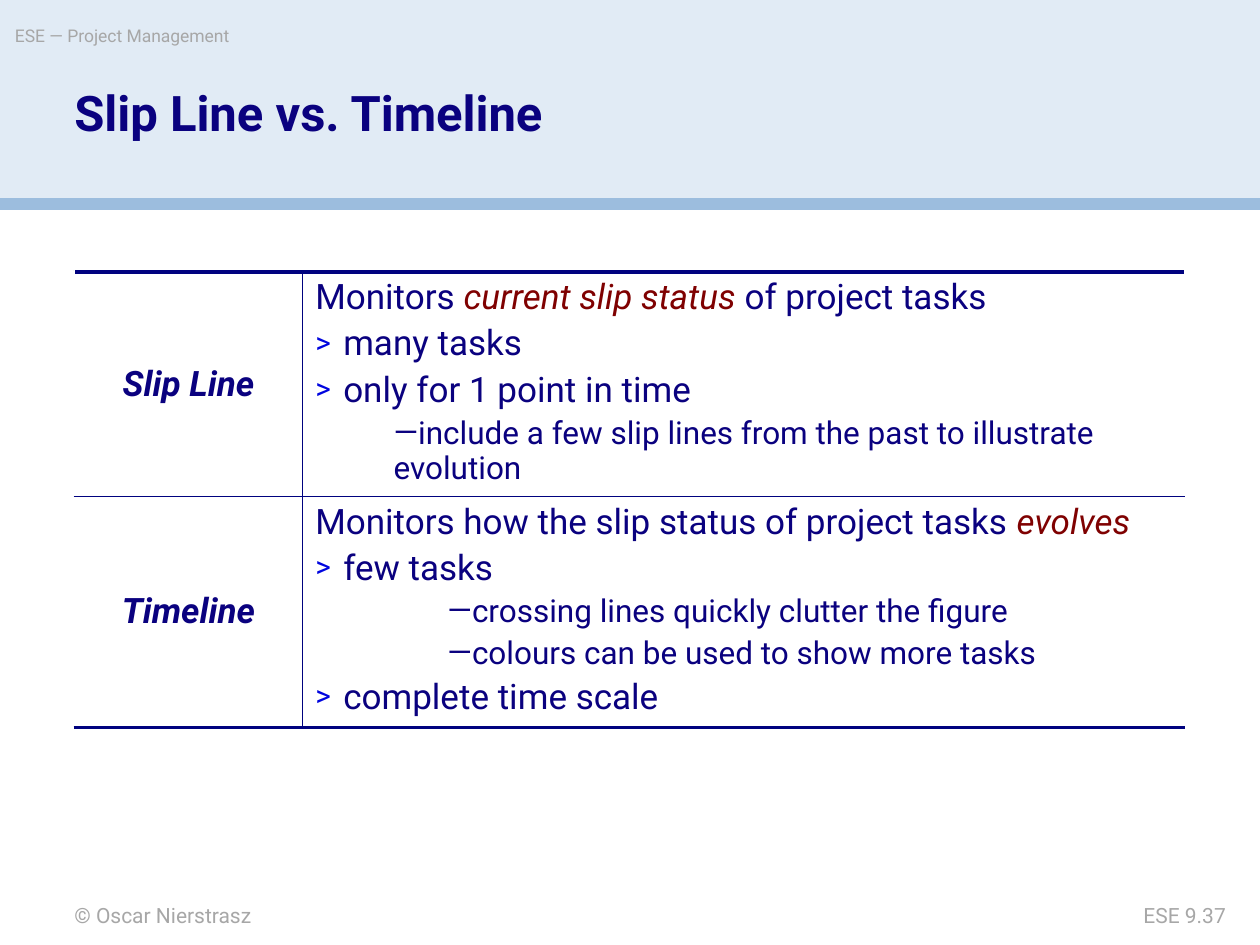
from lxml import etree
from pptx import Presentation
from pptx.dml.color import RGBColor
from pptx.enum.shapes import MSO_SHAPE
from pptx.enum.text import MSO_ANCHOR, PP_ALIGN
from pptx.oxml.ns import qn
from pptx.util import Pt

RECT = MSO_SHAPE.RECTANGLE
LEFT, CENTER, RIGHT = PP_ALIGN.LEFT, PP_ALIGN.CENTER, PP_ALIGN.RIGHT
TOP, MIDDLE = MSO_ANCHOR.TOP, MSO_ANCHOR.MIDDLE

COLORS = {
    "band": "E1EBF5",
    "stripe": "9CBDDE",
    "muted": "A7A7A7",
    "ink": "0A017F",
    "accent": "7F0101",
    "bullet": "0005DF",
    "rule": "00027F",
}
THICK, THIN = 2.25, 1

# Paragraph styles: size, left margin, first-line indent, bullet
INTRO = dict(size=20, margin=16, indent=-16)
POINT = dict(INTRO, bullet=">")
DETAIL = dict(size=18, margin=44.75, indent=0, bullet="—", level=1)
DEEP_DETAIL = dict(DETAIL, margin=45, indent=30.5)

COMPARISON = [
    ("Slip Line", [
        (["Monitors ", "*current slip status", " of project tasks"], INTRO),
        (["many tasks"], POINT),
        (["only for 1 point in time"], POINT),
        (["include a few slip lines from the past to illustrate evolution"], DETAIL),
    ]),
    ("Timeline", [
        (["Monitors how the slip status of project tasks ", "*evolves"], INTRO),
        (["few tasks"], POINT),
        (["crossing lines quickly clutter the figure"], DEEP_DETAIL),
        (["colours can be used to show more tasks"], DEEP_DETAIL),
        (["complete time scale"], POINT),
    ]),
]


def color(name):
    return RGBColor.from_string(COLORS[name])


def add_child(parent, tag, **attributes):
    child = etree.SubElement(parent, qn(tag))
    for key, value in attributes.items():
        child.set(key, str(value))
    return child


def add_text(paragraph, text, font="Roboto", size=20, ink="ink", bold=False, italic=False):
    run = paragraph.add_run()
    run.text = text
    run.font.name = font
    run.font.size = Pt(size)
    run.font.bold = bold
    run.font.italic = italic
    run.font.color.rgb = color(ink)


def space_and_bullet(paragraph, margin=0, indent=0, bullet=None, level=0):
    """Set the spacing of table text, with its indents and bullet."""
    paragraph.line_spacing = 0.95
    paragraph.level = level
    props = paragraph._p.get_or_add_pPr()
    props.set("marL", str(Pt(margin)))
    props.set("indent", str(Pt(indent)))
    add_child(add_child(props, "a:spcBef"), "a:spcPct", val=20000)
    if bullet == ">":
        add_child(add_child(props, "a:buClr"), "a:srgbClr", val=COLORS["bullet"])
        add_child(props, "a:buSzPct", val=85000)
    if bullet:
        add_child(props, "a:buFont", typeface="Roboto")
        add_child(props, "a:buChar", char=bullet)
    else:
        add_child(props, "a:buNone")


def set_borders(cell, **widths):
    """Draw the given sides (L, R, T, B, in this order) and clear the fill."""
    props = cell._tc.get_or_add_tcPr()
    for side, width in widths.items():
        line = add_child(props, f"a:ln{side}", w=Pt(width))
        add_child(add_child(line, "a:solidFill"), "a:srgbClr", val=COLORS["rule"])
    cell.fill.background()


class SlideBuilder:
    def __init__(self, slide):
        self.shapes = slide.shapes

    def bar(self, top, height, fill):
        bar = self.shapes.add_shape(RECT, Pt(0), Pt(top), Pt(720), Pt(height))
        bar.shadow.inherit = False
        bar.fill.solid()
        bar.fill.fore_color.rgb = color(fill)
        bar.line.fill.background()

    def label(self, left, top, width, height, text, align=LEFT, spacing=1.0, **style):
        box = self.shapes.add_textbox(Pt(left), Pt(top), Pt(width), Pt(height))
        frame = box.text_frame
        frame.word_wrap = True
        frame.vertical_anchor = TOP
        frame.margin_left = frame.margin_right = Pt(0)
        frame.margin_top = frame.margin_bottom = Pt(0)
        paragraph = frame.paragraphs[0]
        paragraph.alignment = align
        paragraph.line_spacing = spacing
        add_text(paragraph, text, **style)

    def comparison(self, left, top, column_widths, row_heights, rows):
        """Add a table of names and details; "*" marks an emphasised run."""
        table = self.shapes.add_table(
            len(rows), 2, Pt(left), Pt(top),
            Pt(sum(column_widths)), Pt(sum(row_heights))).table
        table.first_row = table.horz_banding = False
        for column, width in zip(table.columns, column_widths):
            column.width = Pt(width)
        for index, (name, details) in enumerate(rows):
            table.rows[index].height = Pt(row_heights[index])
            above = THICK if index == 0 else THIN
            below = THICK if index == len(rows) - 1 else THIN
            name_cell, detail_cell = table.cell(index, 0), table.cell(index, 1)
            set_borders(name_cell, R=THIN, T=above, B=below)
            set_borders(detail_cell, L=THIN, T=above, B=below)
            self.name(name_cell, name)
            self.details(detail_cell, details)

    def name(self, cell, text):
        cell.vertical_anchor = MIDDLE
        paragraph = cell.text_frame.paragraphs[0]
        paragraph.alignment = CENTER
        space_and_bullet(paragraph)
        add_text(paragraph, text, bold=True, italic=True)

    def details(self, cell, details):
        frame = cell.text_frame
        for index, (parts, style) in enumerate(details):
            paragraph = frame.add_paragraph() if index else frame.paragraphs[0]
            layout = {key: value for key, value in style.items() if key != "size"}
            space_and_bullet(paragraph, **layout)
            for part in parts:
                strong = part.startswith("*")
                add_text(paragraph, part.lstrip("*"), size=style["size"],
                         ink="accent" if strong else "ink", italic=strong)


def main():
    deck = Presentation()
    deck.slide_width, deck.slide_height = Pt(720), Pt(540)
    builder = SlideBuilder(deck.slides.add_slide(deck.slide_layouts[6]))

    builder.bar(0, 113.75, "band")
    builder.bar(113.25, 6.75, "stripe")
    builder.label(42.5, 515.5, 300, 14.5, "© Oscar Nierstrasz", size=12, ink="muted")
    builder.label(8.5, 14.5, 425, 20, "ESE — Project Management", size=10, ink="muted")
    builder.label(594, 516, 106.5, 14.5, "ESE 9.37", align=RIGHT, size=12, ink="muted")
    builder.label(42.5, 51, 521, 64, "Slip Line vs. Timeline",
                  spacing=0.9, size=28, bold=True)
    builder.comparison(42.5, 155.5, [130.5, 504], [106.5, 97], COMPARISON)

    deck.save("out.pptx")


if __name__ == "__main__":
    main()
